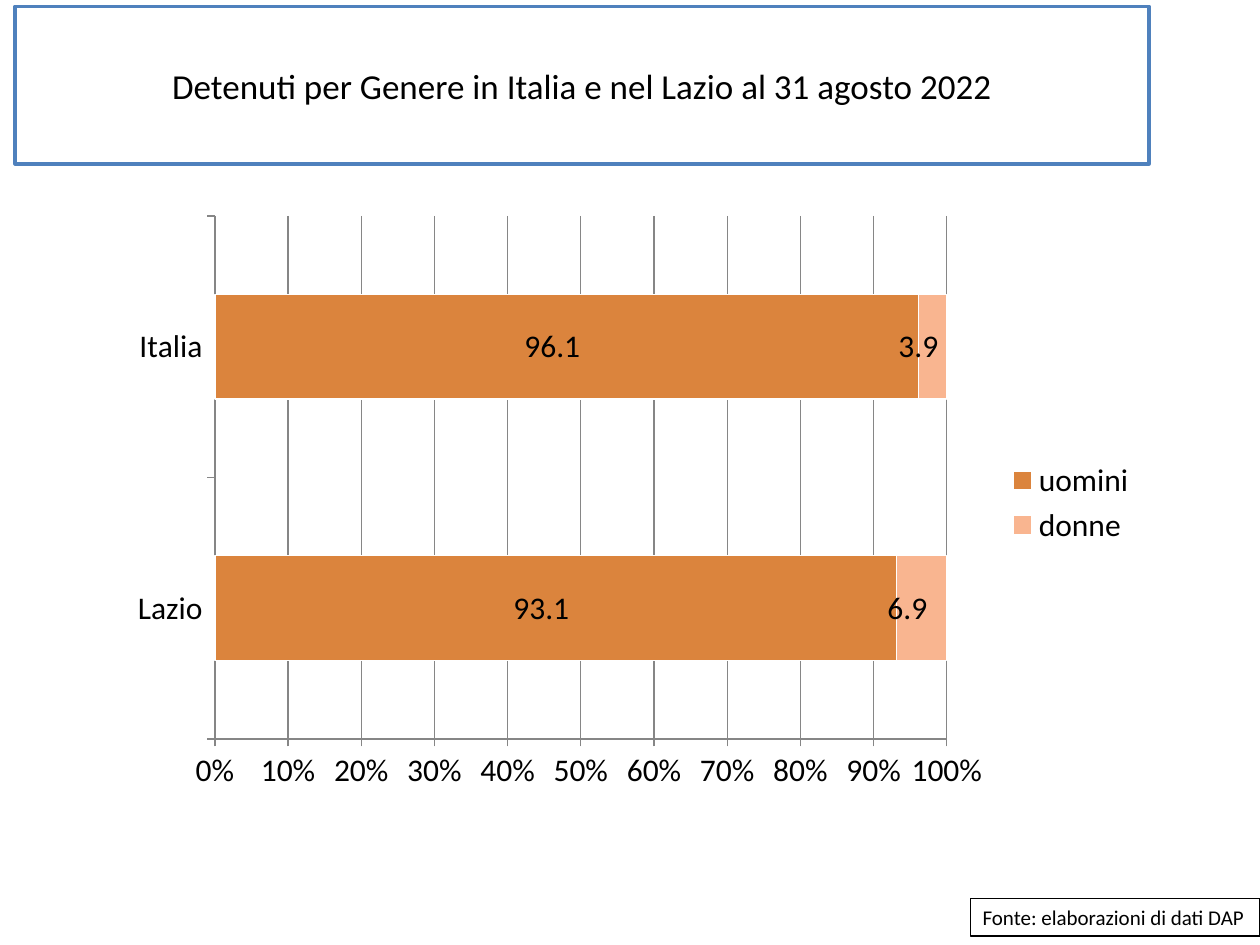
from pptx import Presentation
from pptx import util as u
from pptx.chart.data import CategoryChartData
from pptx.dml.color import RGBColor
from pptx.enum import chart as charts, shapes, text

COLORS = {
    "paper": "FFFFFF",
    "ink": "000000",
    "frame": "4F81BD",
    "grid": "868686",
    "uomini": "DB843D",
    "donne": "F9B590",
}
FONT = "Calibri"
VALUE_FORMAT = "#,##0.0\\ _€_-"


class SlideBuilder:
    """Holds the style and the slide on which elements are placed."""

    def __init__(self, slide):
        self.slide = slide

    def color(self, name):
        return RGBColor.from_string(COLORS[name])

    def style_font(self, font, size):
        font.name = FONT
        font.size = u.Pt(size)
        font.color.rgb = self.color("ink")

    def style_line(self, line, color, width):
        line.color.rgb = self.color(color)
        line.width = u.Pt(width)

    def box(self, bounds, wording, size, outline, width, align, wrap=True):
        panel = self.slide.shapes.add_shape(
            shapes.MSO_SHAPE.RECTANGLE, *map(u.Inches, bounds))
        panel.shadow.inherit = False
        panel.fill.solid()
        panel.fill.fore_color.rgb = self.color("paper")
        self.style_line(panel.line, outline, width)
        frame = panel.text_frame
        frame.word_wrap = wrap
        frame.vertical_anchor = text.MSO_ANCHOR.MIDDLE
        paragraph = frame.paragraphs[0]
        paragraph.alignment = align
        run = paragraph.add_run()
        run.text = wording
        self.style_font(run.font, size)

    def stacked_bars(self, bounds, categories, series, size):
        data = CategoryChartData(number_format=VALUE_FORMAT)
        data.categories = categories
        for name, values in series.items():
            data.add_series(name, values)
        chart = self.slide.shapes.add_chart(
            charts.XL_CHART_TYPE.BAR_STACKED_100, *map(u.Inches, bounds), data).chart
        self.style_font(chart.font, size)
        chart.has_title = False
        chart.has_legend = True
        chart.legend.position = charts.XL_LEGEND_POSITION.RIGHT
        chart.legend.include_in_layout = False
        self.style_font(chart.legend.font, size)

        for axis in (chart.category_axis, chart.value_axis):
            axis.major_tick_mark = charts.XL_TICK_MARK.OUTSIDE
            axis.minor_tick_mark = charts.XL_TICK_MARK.NONE
            self.style_line(axis.format.line, "grid", 0.75)
            self.style_font(axis.tick_labels.font, size)
        percent = chart.value_axis
        percent.minimum_scale, percent.maximum_scale, percent.major_unit = 0, 1, 0.1
        percent.has_major_gridlines = True
        self.style_line(percent.major_gridlines.format.line, "grid", 0.75)
        percent.tick_labels.number_format = "0%"
        percent.tick_labels.number_format_is_linked = False

        plot = chart.plots[0]
        plot.gap_width, plot.overlap = 150, 100
        plot.vary_by_categories = False
        for bars in plot.series:
            bars.format.fill.solid()
            bars.format.fill.fore_color.rgb = self.color(bars.name)
            self.style_line(bars.format.line, "paper", 0.75)
            labels = bars.data_labels
            labels.show_value = True
            labels.position = charts.XL_LABEL_POSITION.CENTER
            labels.number_format = VALUE_FORMAT
            labels.number_format_is_linked = False
            self.style_font(labels.font, size)


def main():
    deck = Presentation()
    deck.slide_width, deck.slide_height = u.Inches(10), u.Inches(7.5)
    builder = SlideBuilder(deck.slides.add_slide(deck.slide_layouts[6]))
    builder.box((0.12, 0.05, 9, 1.25),
                "Detenuti per Genere in Italia e nel Lazio al 31 agosto 2022",
                20, "frame", 2, text.PP_ALIGN.CENTER)
    builder.box((7.7, 7.13, 2.3, 0.3), "Fonte: elaborazioni di dati DAP",
                12, "ink", 0.75, text.PP_ALIGN.LEFT, wrap=False)
    builder.stacked_bars((0.93, 1.62, 8.19, 4.74), ["Lazio", "Italia"],
                         {"uomini": (93.1, 96.1), "donne": (6.9, 3.9)}, 18)
    deck.save("out.pptx")


if __name__ == "__main__":
    main()
